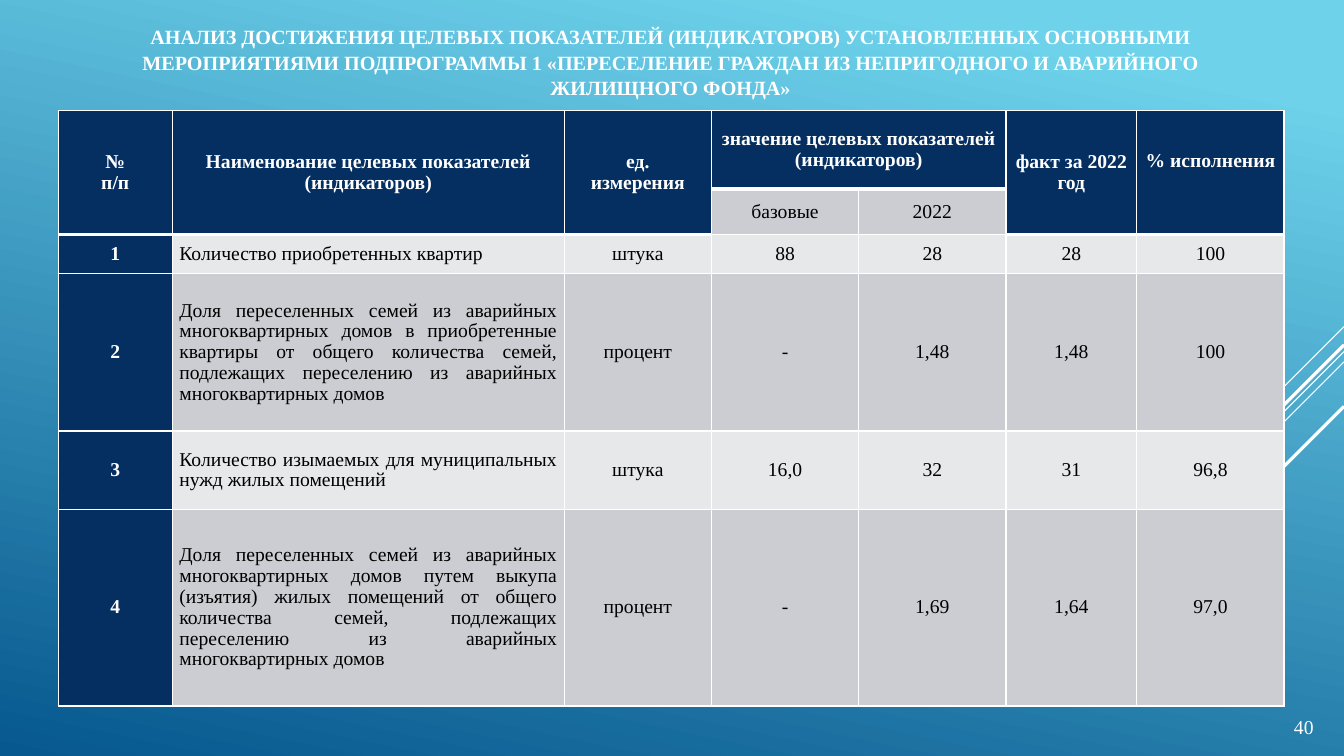
from lxml import etree
from pptx import Presentation
from pptx.dml.color import RGBColor
from pptx.enum import shapes, text
from pptx.oxml import ns
from pptx.util import Cm, Pt

FONT = "Times New Roman"
WHITE = RGBColor(0xFF, 0xFF, 0xFF)
BLACK = RGBColor(0, 0, 0)
NAVY = RGBColor(0x05, 0x2F, 0x61)
LIGHT_BAND = RGBColor(0xE7, 0xE8, 0xEA)
DARK_BAND = RGBColor(0xCC, 0xCD, 0xD2)
SKY = RGBColor(0x6E, 0xD2, 0xEB)
DEEP_BLUE = RGBColor(0x06, 0x58, 0x8E)

SLIDE_WIDTH, SLIDE_HEIGHT = 33.87, 19.05
TITLE = (
    "АНАЛИЗ ДОСТИЖЕНИЯ ЦЕЛЕВЫХ ПОКАЗАТЕЛЕЙ (ИНДИКАТОРОВ) УСТАНОВЛЕННЫХ ОСНОВНЫМИ "
    "МЕРОПРИЯТИЯМИ ПОДПРОГРАММЫ 1 «ПЕРЕСЕЛЕНИЕ ГРАЖДАН ИЗ НЕПРИГОДНОГО И АВАРИЙНОГО "
    "ЖИЛИЩНОГО ФОНДА»"
)
# Top at the right edge, run to the lower left (cm), weight (pt)
DIAGONALS = [
    (8.23, 2.54, 0.75),
    (8.86, 8.28, 0.75),
    (9.12, 5.27, 0.75),
    (8.69, 4.85, 2.25),
    (10.24, 3.53, 2.25),
]
COLUMN_WIDTHS = [2.87, 9.88, 3.71, 3.71, 3.71, 3.3, 3.71]
ROW_HEIGHTS = [1.98, 1.14, 0.99, 3.96, 1.98, 4.95]
HEADER_ROWS = 2
VALUE_COLUMNS = (3, 4)
NAME_COLUMN = 1
ROWS = [
    ["№\nп/п", "Наименование целевых показателей (индикаторов)", "ед.\nизмерения",
     "значение целевых показателей (индикаторов)", "", "факт за 2022 год", "% исполнения"],
    ["", "", "", "базовые", "2022", "", ""],
    ["1", "Количество приобретенных квартир", "штука", "88", "28", "28", "100"],
    ["2", "Доля переселенных семей из аварийных многоквартирных домов в приобретенные "
     "квартиры от общего количества семей, подлежащих переселению из аварийных "
     "многоквартирных домов", "процент", "-", "1,48", "1,48", "100"],
    ["3", "Количество изымаемых для муниципальных нужд жилых помещений", "штука",
     "16,0", "32", "31", "96,8"],
    ["4", "Доля переселенных семей из аварийных многоквартирных домов путем выкупа "
     "(изъятия) жилых помещений от общего количества семей, подлежащих переселению "
     "из аварийных многоквартирных домов", "процент", "-", "1,69", "1,64", "97,0"],
]


def format_paragraph(paragraph, size, color, bold=False, alignment=text.PP_ALIGN.CENTER):
    paragraph.alignment = alignment
    font = paragraph.font
    font.name, font.size, font.bold = FONT, Pt(size), bold
    font.color.rgb = color


def paint_background(slide):
    fill = slide.background.fill
    fill.gradient()
    fill.gradient_angle = 258
    for stop, position, color in zip(fill.gradient_stops, (0.1, 1), (SKY, DEEP_BLUE)):
        stop.position = position
        stop.color.rgb = color


def add_diagonal(slide, top, run, weight):
    line = slide.shapes.add_connector(
        shapes.MSO_CONNECTOR.STRAIGHT,
        Cm(SLIDE_WIDTH), Cm(top), Cm(SLIDE_WIDTH - run), Cm(top + run))
    line.line.color.rgb = WHITE
    line.line.width = Pt(weight)
    etree.SubElement(line._element.spPr, ns.qn("a:effectLst"))


def add_title(slide):
    title = slide.shapes.title
    title.left, title.top, title.width, title.height = Cm(1.7), Cm(0.79), Cm(30.4), Cm(1.52)
    frame = title.text_frame
    frame.text = TITLE
    frame.word_wrap = True
    frame.auto_size = text.MSO_AUTO_SIZE.NONE
    frame.vertical_anchor = text.MSO_ANCHOR.MIDDLE
    frame.paragraphs[0].line_spacing = 1.06
    format_paragraph(frame.paragraphs[0], 14.4, WHITE, bold=True)


def set_borders(cell, bottom_weight):
    properties = cell._tc.get_or_add_tcPr()
    for side in "LRTB":
        weight = bottom_weight if side == "B" else 1
        border = etree.SubElement(properties, ns.qn(f"a:ln{side}"), w=str(Pt(weight)))
        fill = etree.SubElement(border, ns.qn("a:solidFill"))
        etree.SubElement(fill, ns.qn("a:srgbClr"), val=str(WHITE))


def format_cell(cell, row, column):
    is_subheader = row == 1 and column in VALUE_COLUMNS
    is_header = row < HEADER_ROWS and not is_subheader
    is_dark = is_header or column == 0
    is_name = column == NAME_COLUMN and row >= HEADER_ROWS

    set_borders(cell, 3 if is_header else 1)
    cell.fill.solid()
    band = DARK_BAND if row % 2 else LIGHT_BAND
    cell.fill.fore_color.rgb = NAVY if is_dark else band
    cell.vertical_anchor = text.MSO_ANCHOR.MIDDLE
    cell.margin_left = cell.margin_right = Cm(0.18)
    cell.margin_top = cell.margin_bottom = 0
    cell.text = ROWS[row][column]
    for paragraph in cell.text_frame.paragraphs:
        paragraph.line_spacing = 0.96
        format_paragraph(
            paragraph, 14, WHITE if is_dark else BLACK, is_dark,
            text.PP_ALIGN.JUSTIFY if is_name else text.PP_ALIGN.CENTER)


def add_indicator_table(slide):
    table = slide.shapes.add_table(
        len(ROWS), len(COLUMN_WIDTHS), Cm(1.47), Cm(2.79),
        Cm(sum(COLUMN_WIDTHS)), Cm(sum(ROW_HEIGHTS))).table
    for column, width in zip(table.columns, COLUMN_WIDTHS):
        column.width = Cm(width)
    for row, height in zip(table.rows, ROW_HEIGHTS):
        row.height = Cm(height)
    for row in range(len(ROWS)):
        for column in range(len(COLUMN_WIDTHS)):
            format_cell(table.cell(row, column), row, column)

    first_value, last_value = VALUE_COLUMNS
    table.cell(0, first_value).merge(table.cell(0, last_value))
    for column in range(len(COLUMN_WIDTHS)):
        if column not in VALUE_COLUMNS:
            table.cell(0, column).merge(table.cell(1, column))
    # Lifts the one-line heading level with its two-line neighbours
    table.cell(0, len(COLUMN_WIDTHS) - 1).margin_bottom = Cm(0.55)


def add_page_number(slide, number):
    box = slide.shapes.add_textbox(Cm(32.36), Cm(17.88), Cm(1.02), Cm(0.86))
    frame = box.text_frame
    frame.word_wrap = False
    frame.text = number
    format_paragraph(frame.paragraphs[0], 14, WHITE, alignment=text.PP_ALIGN.LEFT)


def main():
    presentation = Presentation()
    presentation.slide_width, presentation.slide_height = Cm(SLIDE_WIDTH), Cm(SLIDE_HEIGHT)
    slide = presentation.slides.add_slide(presentation.slide_layouts[5])
    paint_background(slide)
    for top, run, weight in DIAGONALS:
        add_diagonal(slide, top, run, weight)
    add_title(slide)
    add_indicator_table(slide)
    add_page_number(slide, "40")
    presentation.save("out.pptx")


if __name__ == "__main__":
    main()
